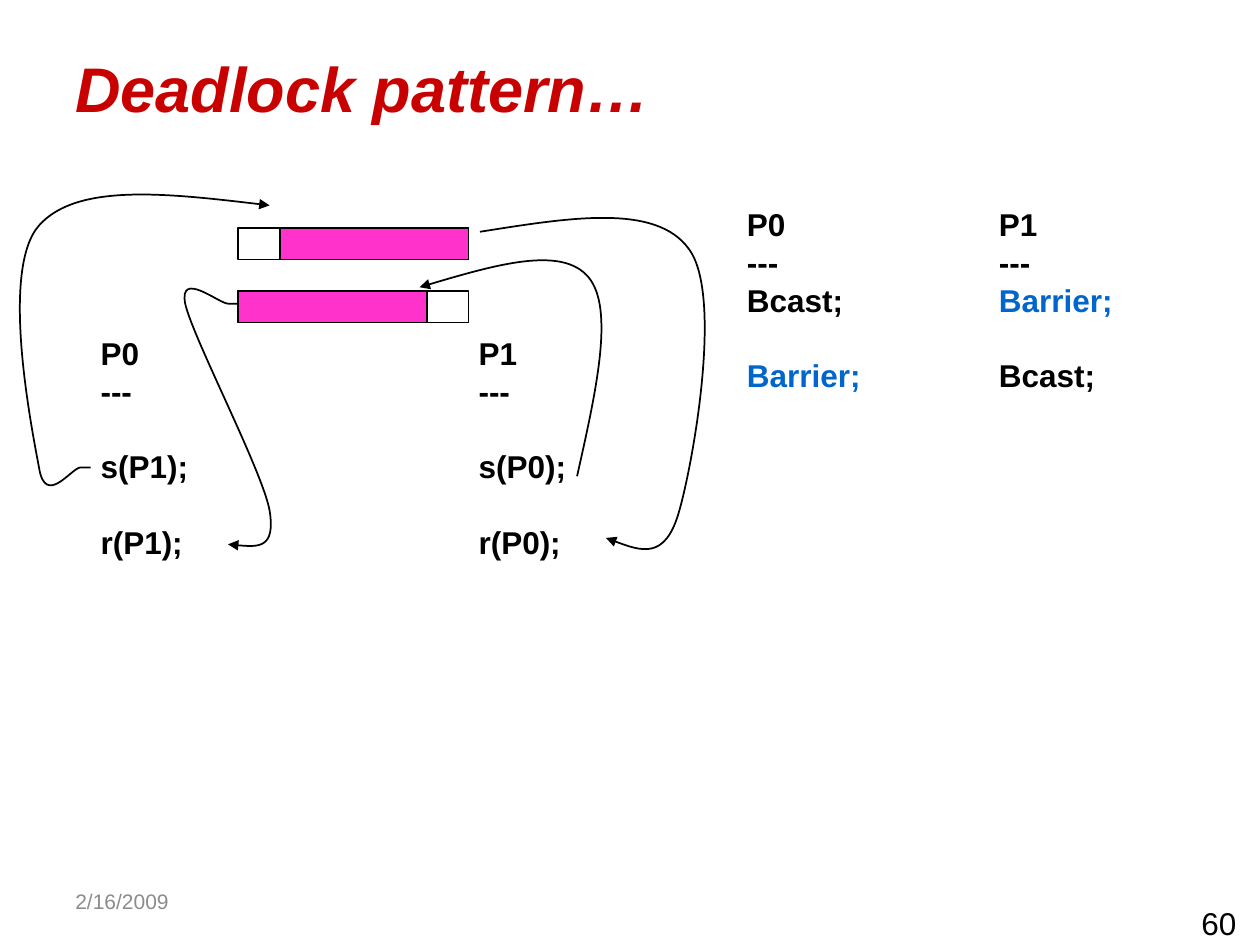
from lxml.etree import SubElement
from pptx import Presentation
from pptx.dml.color import RGBColor
from pptx.enum.shapes import MSO_SHAPE
from pptx.enum.text import MSO_ANCHOR, PP_ALIGN
from pptx.oxml.ns import qn
from pptx.util import Pt

EMU_PER_PX = 9144  # 100 px to the inch
BLACK = RGBColor(0x00, 0x00, 0x00)
RED = RGBColor(0xC8, 0x00, 0x00)
GRAY = RGBColor(0x8C, 0x8C, 0x8C)
BLUE = RGBColor(0x00, 0x66, 0xCC)
PINK = RGBColor(0xFF, 0x33, 0xCC)


def px(length):
    return length * EMU_PER_PX


def write_run(paragraph, text, *, font="Arial", size=18, color=BLACK, bold=False, italic=False):
    run = paragraph.add_run()
    run.text = text
    run.font.name = font
    run.font.size = Pt(size)
    run.font.color.rgb = color
    run.font.bold = bold
    run.font.italic = italic


class SlideBuilder:
    """Holds the current slide and the style its elements share."""

    line_width = Pt(1)
    code_pitch = Pt(21.6)

    def __init__(self, slide):
        self.slide = slide

    def text_frame(self, left, top, width, height, anchor):
        box = self.slide.shapes.add_textbox(px(left), px(top), px(width), px(height))
        frame = box.text_frame
        frame.word_wrap = True
        frame.vertical_anchor = anchor
        return frame

    def label(self, text, left, top, width, height, align=PP_ALIGN.LEFT, spacing=1.0, **text_format):
        frame = self.text_frame(left, top, width, height, MSO_ANCHOR.MIDDLE)
        paragraph = frame.paragraphs[0]
        paragraph.alignment = align
        paragraph.line_spacing = spacing
        write_run(paragraph, text, **text_format)

    def process_columns(self, rows, left, top, width, height, column_gap):
        """Write rows of (first, second, gap above in lines), the second cell at a tab stop."""
        frame = self.text_frame(left, top, width, height, MSO_ANCHOR.TOP)
        for index, (first, second, gap_lines) in enumerate(rows):
            paragraph = frame.add_paragraph() if index else frame.paragraphs[0]
            paragraph.line_spacing = self.code_pitch
            if gap_lines:
                paragraph.space_before = self.code_pitch * gap_lines
            tab_list = SubElement(paragraph._p.get_or_add_pPr(), qn("a:tabLst"))
            SubElement(tab_list, qn("a:tab"), pos=str(px(column_gap)), algn="l")
            for text, lead in ((first, ""), (second, "\t")):
                color = BLUE if text == "Barrier;" else BLACK
                write_run(paragraph, lead + text, color=color, bold=True)

    def outline(self, shape):
        shape.shadow.inherit = False
        shape.line.color.rgb = BLACK
        shape.line.width = self.line_width

    def bar(self, left, top, width, height, fill=None):
        shape = self.slide.shapes.add_shape(
            MSO_SHAPE.RECTANGLE, px(left), px(top), px(width), px(height))
        self.outline(shape)
        if fill is None:
            shape.fill.background()
        else:
            shape.fill.solid()
            shape.fill.fore_color.rgb = fill

    def curved_arrow(self, start, *points):
        """Draw cubic curves, three points each, with an arrowhead at the end."""
        builder = self.slide.shapes.build_freeform(*start, scale=EMU_PER_PX)
        builder.add_line_segments(points, close=False)
        shape = builder.convert_to_shape()
        segments = shape._element.xpath(".//a:lnTo")
        for index in range(0, len(segments), 3):
            first, *others = segments[index:index + 3]
            curve = SubElement(first.getparent(), qn("a:cubicBezTo"))
            for segment in (first, *others):
                curve.append(segment[0])
                segment.getparent().remove(segment)
        self.outline(shape)
        shape.fill.background()
        SubElement(shape.line._get_or_add_ln(), qn("a:tailEnd"), type="triangle")


def main():
    presentation = Presentation()
    presentation.slide_width = px(1000)
    presentation.slide_height = px(750)
    builder = SlideBuilder(presentation.slides.add_slide(presentation.slide_layouts[6]))

    builder.label("60", 783, 716, 208, 33, align=PP_ALIGN.RIGHT)
    builder.label("Deadlock pattern…", 50, 30, 900, 87, spacing=0.9,
                  size=36, color=RED, bold=True, italic=True)
    builder.label("2/16/2009", 50, 695, 233, 40, size=12, color=GRAY)

    header = [("P0", "P1", 0), ("---", "---", 0)]
    builder.process_columns(header + [("s(P1);", "s(P0);", 1), ("r(P1);", "r(P0);", 1)],
                            70, 260, 390, 190, column_gap=300)

    buffer_left, buffer_width, filled_width = 189, 183, 150
    for top, filled_left in ((181, buffer_left + buffer_width - filled_width), (231, buffer_left)):
        builder.bar(buffer_left, top, buffer_width, 25)
        builder.bar(filled_left, top, filled_width, 25, fill=PINK)

    # P1 send, P0 buffer to P1 receive, P1 buffer to P0 receive, P0 send
    builder.curved_arrow((458, 378), (473, 311), (488, 245), (467, 220),
                         (446, 195), (390, 211), (333, 228))
    builder.curved_arrow((381, 184), (451, 173), (521, 161), (547, 198),
                         (574, 235), (550, 368), (539, 406),
                         (528, 445), (504, 436), (481, 427))
    builder.curved_arrow((189, 241), (188, 241), (188, 241), (181, 241),
                         (174, 241), (142, 214), (147, 241),
                         (153, 268), (208, 373), (214, 405),
                         (219, 436), (200, 434), (181, 432))
    builder.curved_arrow((72, 371), (72, 371), (71, 371), (64, 371),
                         (57, 371), (36, 403), (31, 371),
                         (25, 339), (0, 214), (31, 179),
                         (61, 145), (138, 154), (214, 163))

    builder.process_columns(header + [("Bcast;", "Barrier;", 0), ("Barrier;", "Bcast;", 1)],
                            583, 158, 412, 250, column_gap=200)
    presentation.save("out.pptx")


if __name__ == "__main__":
    main()
